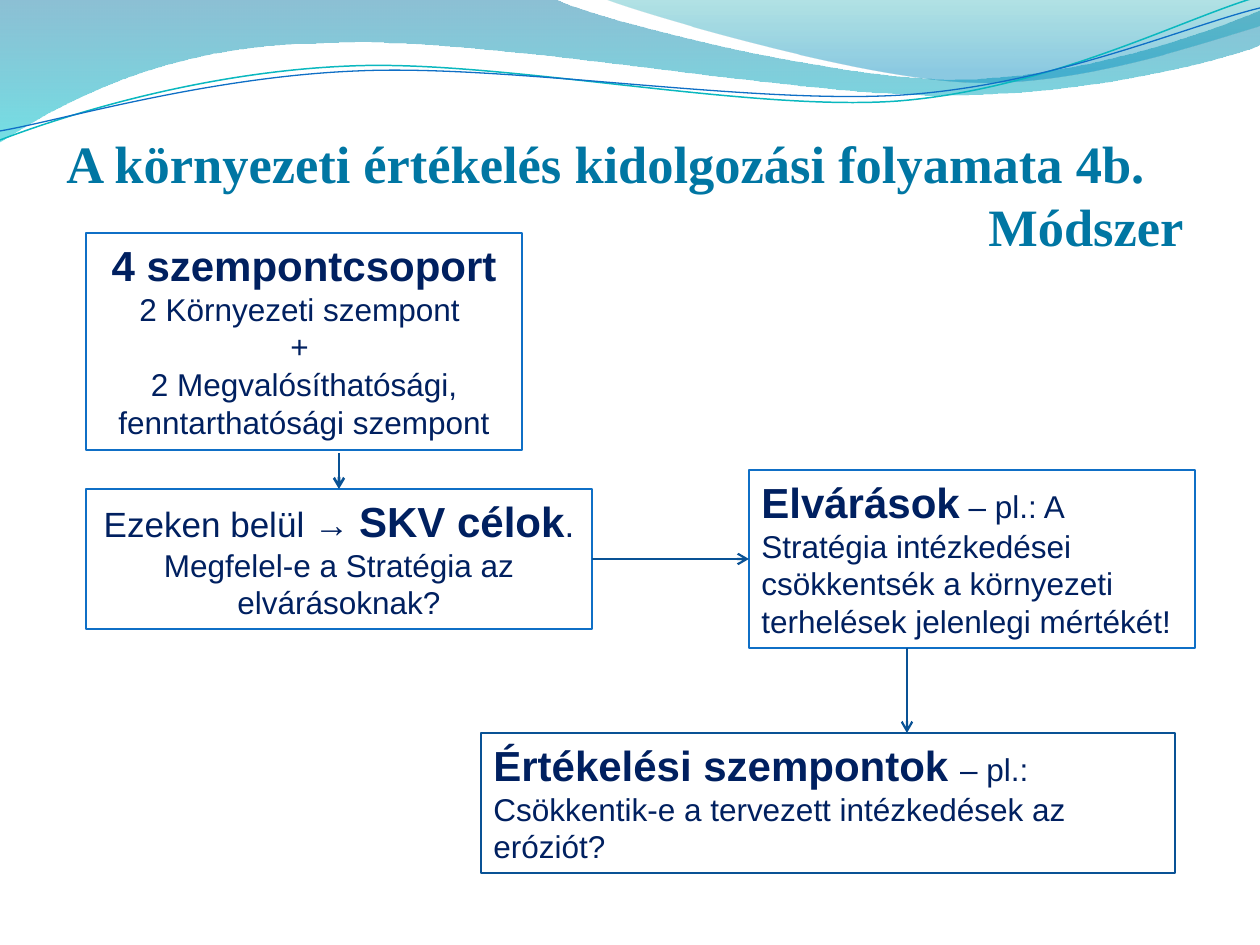
from lxml.etree import SubElement
from pptx import Presentation
from pptx.dml.color import RGBColor
from pptx.enum.shapes import MSO_CONNECTOR, MSO_SHAPE
from pptx.enum.text import MSO_ANCHOR, MSO_AUTO_SIZE, PP_ALIGN
from pptx.oxml.ns import qn
from pptx.util import Emu, Pt

COLORS = {
    "title": "0076A3", "text": "002060", "border": "0F6FC6", "arrow": "095295",
    "teal_line": "0AB8BF", "deep_blue": "0074A1", "cyan": "00C6CF",
    "teal": "00A1A9", "sky": "008BBF",
}


def px(length):
    return Emu(round(length * 914400 / 126))


def color(name):
    return RGBColor.from_string(COLORS[name])


def add_outline(slide, left, top, segments, close):
    """Draw segments: one pair is a corner, three pairs are a Bézier curve."""
    points = [(px(left + segment[i]), px(top + segment[i + 1]))
              for segment in segments for i in range(0, len(segment), 2)]
    builder = slide.shapes.build_freeform(*points[0])
    builder.add_line_segments(points[1:], close=close)
    outline = builder.convert_to_shape()
    outline.shadow.inherit = False

    corners = iter(list(outline._element.iter(qn("a:lnTo"))))
    for segment in segments[1:]:
        corner = next(corners)
        if len(segment) == 6:
            corner.tag = qn("a:cubicBezTo")
            for _ in range(2):
                extra = next(corners)
                corner.append(extra[0])
                extra.getparent().remove(extra)
    return outline


def add_wave(slide, left, top, segments, stops):
    """Stops are (position, colour, opacity in percent), from top to bottom."""
    wave = add_outline(slide, left, top, segments, close=True)
    wave.line.fill.background()
    wave.fill.gradient()
    wave.fill.gradient_angle = 270
    for stop, (position, name, _) in zip(wave.fill.gradient_stops, stops):
        stop.position = position
        stop.color.rgb = color(name)
    for tint, (_, _, opacity) in zip(wave._element.spPr.iter(qn("a:srgbClr")), stops):
        SubElement(tint, qn("a:alpha"), val=str(opacity * 1000))


def add_strand(slide, left, top, segments, name, width):
    strand = add_outline(slide, left, top, segments, close=False)
    strand.fill.background()
    strand.line.color.rgb = color(name)
    strand.line.width = Pt(width)


def add_header_waves(slide, left, top):
    add_wave(slide, left, top, [
        (0, -1), (554, -1), (600, 21, 837, 79, 955, 79), (1075, 79, 1207, 33, 1260, 11),
        (1261, 45), (1239, 55, 1096, 96, 940, 95), (784, 95, 481, 35, 324, 43),
        (163, 44, 58, 105, -1, 142),
    ], [(0, "deep_blue", 45), (1, "cyan", 55)])
    add_wave(slide, left, top, [
        (604, -1), (641, 14, 859, 78, 969, 82), (1079, 87, 1211, 40, 1260, 26), (1260, 0),
    ], [(0, "teal", 30), (0.8, "sky", 45)])
    add_strand(slide, left, top, [
        (0, 140), (60, 117, 199, 72, 349, 66), (498, 59, 747, 112, 898, 101),
        (1049, 89, 1182, 19, 1257, -3),
    ], "teal_line", 0.85)
    add_strand(slide, left, top, [
        (0, 131), (59, 121, 207, 77, 357, 71), (508, 64, 752, 105, 903, 95),
        (1053, 85, 1186, 26, 1260, 8),
    ], "border", 0.75)


def add_title(slide, left, top, width, height):
    frame = slide.shapes.add_textbox(px(left), px(top), px(width), px(height)).text_frame
    frame.word_wrap = True
    frame.text = "A környezeti értékelés kidolgozási folyamata 4b.\nMódszer"
    frame.paragraphs[1].alignment = PP_ALIGN.RIGHT
    for paragraph in frame.paragraphs:
        font = paragraph.font
        font.name, font.size, font.bold = "Times New Roman", Pt(30), True
        font.color.rgb = color("title")


def add_step(slide, left, top, width, height, paragraphs,
             align=PP_ALIGN.LEFT, border="border"):
    """Paragraphs are lists of (text, size); text of 24 points is bold."""
    step = slide.shapes.add_shape(MSO_SHAPE.RECTANGLE,
                                  px(left), px(top), px(width), px(height))
    step.shadow.inherit = False
    step.fill.background()
    step.line.color.rgb = color(border)
    step.line.width = Pt(0.75)
    frame = step.text_frame
    frame.word_wrap = True
    frame.auto_size = MSO_AUTO_SIZE.SHAPE_TO_FIT_TEXT
    frame.vertical_anchor = MSO_ANCHOR.TOP
    for index, runs in enumerate(paragraphs):
        paragraph = frame.add_paragraph() if index else frame.paragraphs[0]
        paragraph.alignment = align
        paragraph.font.name = "Arial"
        paragraph.font.color.rgb = color("text")
        for text, size in runs:
            run = paragraph.add_run()
            run.text = text
            run.font.size = Pt(size)
            run.font.bold = size == 24
    return step


def add_arrow(slide, start, end, width=1.25):
    arrow = slide.shapes.add_connector(MSO_CONNECTOR.STRAIGHT, *map(px, start + end))
    arrow.line.color.rgb = color("arrow")
    arrow.line.width = Pt(width)
    SubElement(arrow.line._get_or_add_ln(), qn("a:tailEnd"), type="arrow")
    SubElement(arrow._element.spPr, qn("a:effectLst"))
    return arrow


def add_process(slide, left, top):
    add_step(slide, left, top, 436, 217, [
        [("4 szempontcsoport", 24)],
        [("2 Környezeti szempont ", 18)],
        [("+ ", 18)],
        [("2 Megvalósíthatósági, fenntarthatósági szempont", 18)],
    ], PP_ALIGN.CENTER)
    goals = add_step(slide, left, top + 256, 506, 140, [
        [("Ezeken belül → ", 20), ("SKV célok", 24), (".", 20)],
        [("Megfelel-e a Stratégia az elvárásoknak?", 18)],
    ], PP_ALIGN.CENTER)
    expectations = add_step(slide, left + 663, top + 237, 446, 178, [
        [("Elvárások", 24),
         (" – pl.: A Stratégia intézkedései csökkentsék a környezeti "
          "terhelések jelenlegi mértékét!", 18)],
    ])
    add_step(slide, left + 395, top + 500, 694, 140, [
        [("Értékelési szempontok ", 24),
         ("– pl.: Csökkentik-e a tervezett intézkedések az eróziót?", 18)],
    ], border="arrow")

    to_goals = add_arrow(slide, (left + 253, top + 220), (left + 253, top + 256), 1.5)
    to_goals.end_connect(goals, 0)
    to_expectations = add_arrow(slide, (left + 506, top + 326), (left + 663, top + 326))
    to_expectations.begin_connect(goals, 3)
    to_expectations.end_connect(expectations, 1)
    add_arrow(slide, (left + 821, top + 415), (left + 821, top + 500))


def main():
    presentation = Presentation()
    presentation.slide_width, presentation.slide_height = px(1260), px(945)
    slide = presentation.slides.add_slide(presentation.slide_layouts[6])
    add_header_waves(slide, 0, 0)
    add_title(slide, 54, 125, 1142, 140)
    add_process(slide, 86, 233)
    presentation.save("out.pptx")


if __name__ == "__main__":
    main()
